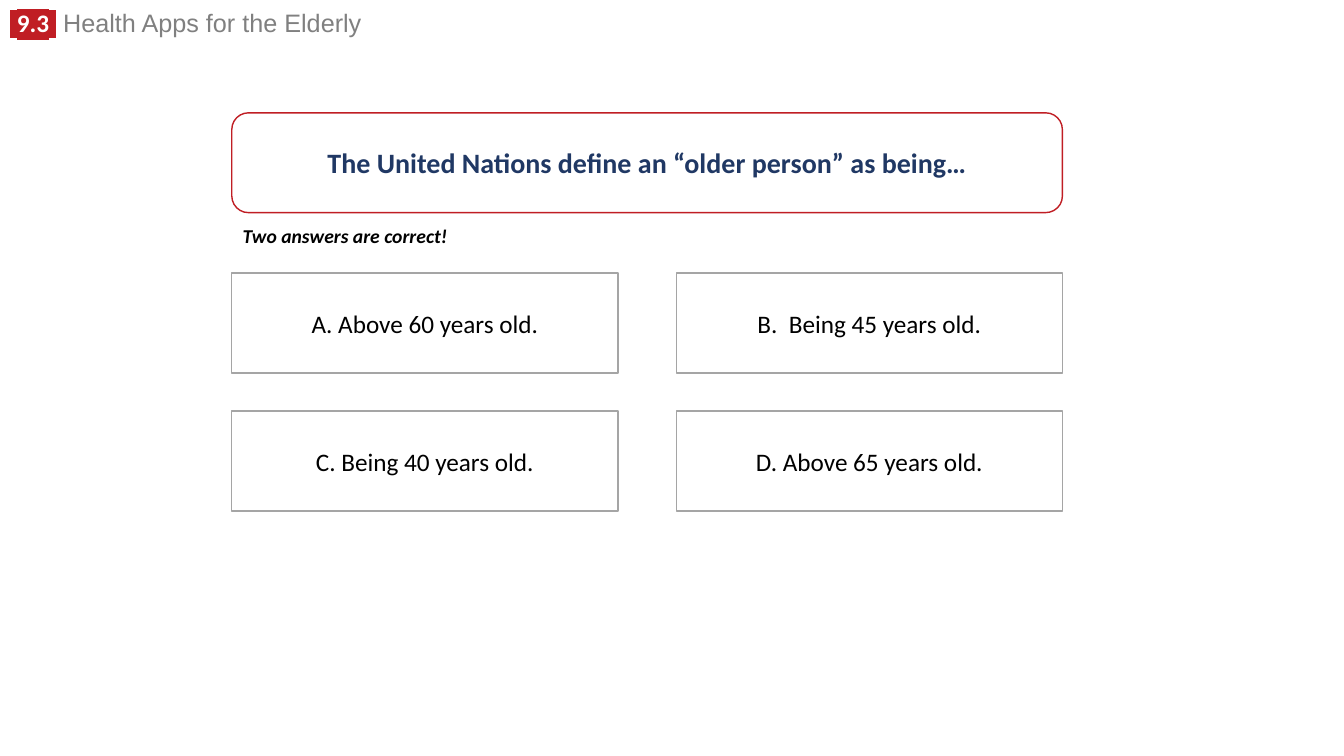
"""Build the quiz slide on the United Nations definition of an older person."""
from lxml import etree
from pptx import Presentation
from pptx.dml.color import RGBColor
from pptx.enum import shapes, text
from pptx.oxml import ns
from pptx.util import Pt

RED = RGBColor(0xC0, 0x1E, 0x24)
NAVY = RGBColor(0x20, 0x38, 0x64)
GREY = RGBColor(0x80, 0x80, 0x80)
BORDER = RGBColor(0xA5, 0xA5, 0xA5)
WHITE = RGBColor(0xFF, 0xFF, 0xFF)
BLACK = RGBColor(0, 0, 0)


def add_run(p, words, size=18, font="Calibri", color=BLACK, bold=False,
            italic=False, highlight=None):
    r = p.add_run()
    r.text = words
    r.font.size, r.font.name = Pt(size), font
    r.font.bold, r.font.italic = bold, italic
    r.font.color.rgb = color
    if highlight is not None:
        mark = etree.Element(ns.qn("a:highlight"))
        etree.SubElement(mark, ns.qn("a:srgbClr"), val=str(highlight))
        r.font.fill._xPr.find(ns.qn("a:solidFill")).addnext(mark)


def add_box(kind, left, top, width, line, words, **fmt):
    sp = s.shapes.add_shape(kind, Pt(left), Pt(top), Pt(width), Pt(BOX_H))
    sp.shadow.inherit = False
    sp.fill.solid()
    sp.fill.fore_color.rgb = WHITE
    sp.line.color.rgb = line
    sp.line.width = Pt(1)
    tf = sp.text_frame
    tf.word_wrap = True
    tf.vertical_anchor = text.MSO_ANCHOR.MIDDLE
    p = tf.paragraphs[0]
    p.alignment = text.PP_ALIGN.CENTER
    add_run(p, words, **fmt)


prs = Presentation()
prs.slide_width, prs.slide_height = Pt(960), Pt(540)
s = prs.slides.add_slide(prs.slide_layouts[6])

LEFT, BOX_H = 165.6, 71.3
ANSWER_W, COL_STEP = 275.8, 317.5
ANSWER_TOP, ROW_STEP = 195.1, 98.6

tf = s.shapes.add_textbox(Pt(0), Pt(6.2), Pt(685.4), Pt(25)).text_frame
tf.word_wrap = True
tf.auto_size = text.MSO_AUTO_SIZE.SHAPE_TO_FIT_TEXT
p = tf.paragraphs[0]
p.line_spacing = 0.8
for words, font in [(" ", "Arial"), ("9.3", "Calibri"), (" ", "Arial")]:
    add_run(p, words, font=font, color=WHITE, bold=True, highlight=RED)
add_run(p, " Health Apps for the Elderly", font="Arial", color=GREY)

add_box(shapes.MSO_SHAPE.ROUNDED_RECTANGLE, LEFT, 80.6, COL_STEP + ANSWER_W, RED,
        "The United Nations define an “older person” as being…",
        size=20, color=NAVY, bold=True)

answers = ["A. Above 60 years old.", "B.  Being 45 years old.",
           "C. Being 40 years old.", "D. Above 65 years old."]
for i, answer in enumerate(answers):
    row, col = divmod(i, 2)
    add_box(shapes.MSO_SHAPE.RECTANGLE, LEFT + col * COL_STEP,
            ANSWER_TOP + row * ROW_STEP, ANSWER_W, BORDER, answer)

tf = s.shapes.add_textbox(Pt(166.3), Pt(156.2), Pt(161.3), Pt(24.5)).text_frame
tf.word_wrap = False
tf.auto_size = text.MSO_AUTO_SIZE.SHAPE_TO_FIT_TEXT
add_run(tf.paragraphs[0], "Two answers are correct!", size=14, bold=True, italic=True)

prs.save("out.pptx")
